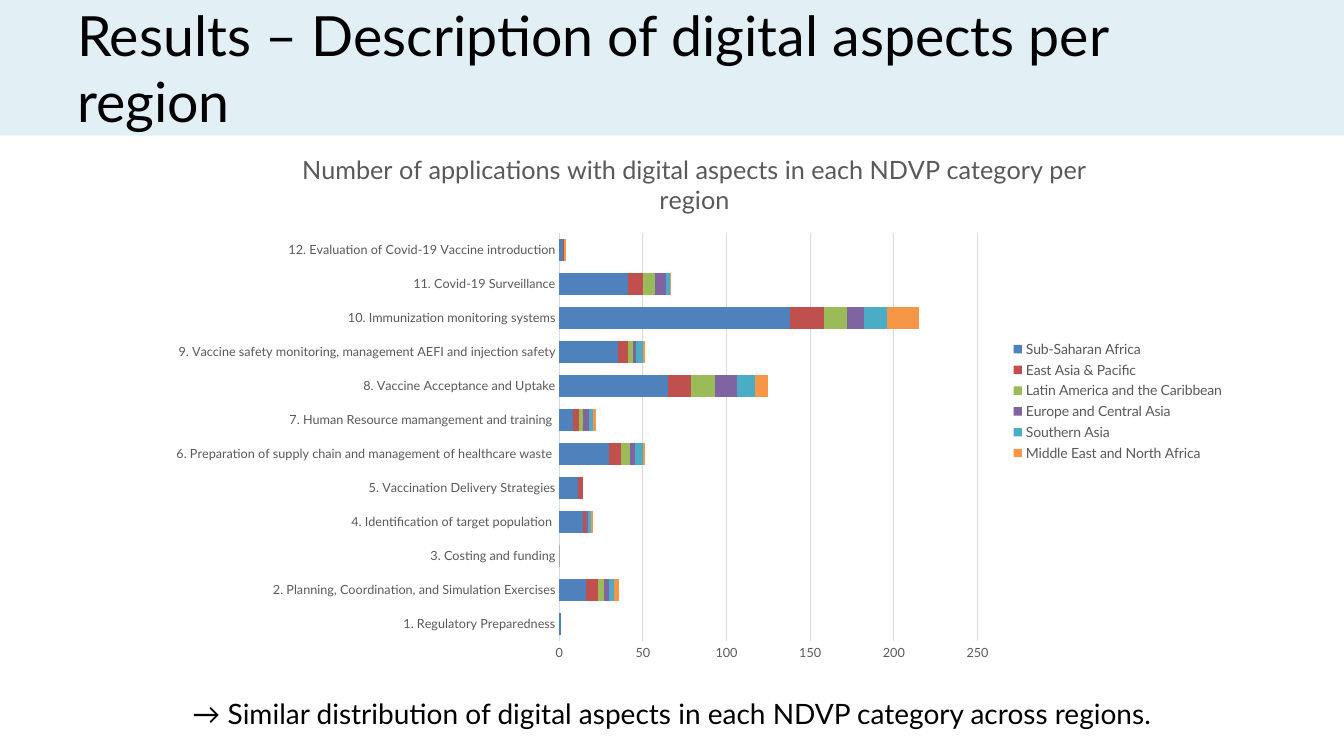
from pptx import Presentation
from pptx import util as u
from pptx.chart import data as chart_data
from pptx.dml import color
from pptx.enum import chart as ch, shapes, text
from pptx.oxml import parse_xml
from pptx.oxml.ns import nsdecls, qn

FACE = "Lato"
GREY = "595959"
RULE = "D9D9D9"
CATEGORIES = [
    "1. Regulatory Preparedness",
    "2. Planning, Coordination, and Simulation Exercises",
    "3. Costing and funding",
    "4. Identification of target population ",
    "5. Vaccination Delivery Strategies",
    "6. Preparation of supply chain and management of healthcare waste ",
    "7. Human Resource mamangement and training ",
    "8. Vaccine Acceptance and Uptake",
    "9. Vaccine safety monitoring, management AEFI and injection safety",
    "10. Immunization monitoring systems",
    "11. Covid-19 Surveillance",
    "12. Evaluation of Covid-19 Vaccine introduction",
]
REGIONS = [
    ("Sub-Saharan Africa", "4F81BD", [1, 16, 0, 14, 11, 30, 8, 65, 35, 138, 41, 2]),
    ("East Asia & Pacific", "C0504D", [0, 7, 0, 2, 3, 7, 4, 14, 6, 20, 9, 1]),
    ("Latin America and the Caribbean", "9BBB59", [0, 4, 0, 0, 0, 5, 2, 14, 3, 14, 7, 0]),
    ("Europe and Central Asia", "8064A2", [0, 3, 0, 1, 0, 3, 4, 13, 2, 10, 7, 0]),
    ("Southern Asia", "4BACC6", [0, 3, 0, 2, 0, 5, 2, 11, 4, 14, 2, 0]),
    ("Middle East and North Africa", "F79646", [0, 3, 0, 1, 0, 1, 2, 8, 1, 19, 1, 1]),
]


def rgb(code):
    """Turn a hex string into a colour."""
    return color.RGBColor.from_string(code)


def set_font(font, size, code):
    """Set face, size and colour of a font."""
    font.name, font.size, font.bold = FACE, u.Pt(size), False
    font.color.rgb = rgb(code)


def write(frame, words, size=20, code="000000", align=text.PP_ALIGN.LEFT,
          anchor=text.MSO_ANCHOR.TOP):
    """Write formatted words into a text frame."""
    frame.word_wrap = True
    frame.vertical_anchor = anchor
    line = frame.paragraphs[0]
    line.alignment = align
    run = line.add_run()
    run.text = words
    set_font(run.font, size, code)


def add_text(slide, box, words, **style):
    """Add a text box holding formatted words."""
    write(slide.shapes.add_textbox(*map(u.Pt, box)).text_frame, words, **style)


def add_header(slide, box, words):
    """Draw the title band with its heading inside."""
    left, top, width, height = box
    band = slide.shapes.add_shape(shapes.MSO_SHAPE.RECTANGLE, *map(u.Pt, box))
    band.shadow.inherit = False
    band.fill.solid()
    band.fill.fore_color.rgb = rgb("E2F0F6")
    band.line.fill.background()
    add_text(slide, (left + 48, top + 3, width - 96, height - 7), words,
             size=39.6, anchor=text.MSO_ANCHOR.MIDDLE)


def place_plot(chart, x, y, w, h):
    """Fix the inner plot area as fractions of the chart."""
    area = chart._chartSpace.chart.plotArea
    for old in area.findall(qn("c:layout")):
        area.remove(old)
    sizes = "".join(f'<c:{tag} val="{value}"/>'
                    for tag, value in zip("xywh", (x, y, w, h)))
    area.insert(0, parse_xml(
        f'<c:layout {nsdecls("c")}><c:manualLayout><c:layoutTarget val="inner"/>'
        f'<c:xMode val="edge"/><c:yMode val="edge"/>{sizes}'
        '</c:manualLayout></c:layout>'))


def add_region_chart(slide, box, title):
    """Add the stacked bars of applications per category and region."""
    counts = chart_data.CategoryChartData()
    counts.categories = CATEGORIES
    for region, _, values in REGIONS:
        counts.add_series(region, values)
    chart = slide.shapes.add_chart(
        ch.XL_CHART_TYPE.BAR_STACKED, *map(u.Pt, box), counts).chart
    set_font(chart.font, 10, "000000")
    chart.has_title = True
    write(chart.chart_title.text_frame, title, size=18, code=GREY,
          align=text.PP_ALIGN.CENTER)
    chart.chart_title.include_in_layout = False

    bars = chart.plots[0]
    bars.gap_width, bars.overlap, bars.vary_by_categories = 55, 100, False
    for series, (_, code, _) in zip(bars.series, REGIONS):
        series.format.fill.solid()
        series.format.fill.fore_color.rgb = rgb(code)

    category, value = chart.category_axis, chart.value_axis
    for axis in (category, value):
        axis.major_tick_mark = axis.minor_tick_mark = ch.XL_TICK_MARK.NONE
        set_font(axis.tick_labels.font, 9, GREY)
    category.has_major_gridlines = False
    value.has_major_gridlines = True
    value.minimum_scale, value.maximum_scale, value.major_unit = 0, 250, 50
    value.format.line.fill.background()
    for line in (category.format.line, value.major_gridlines.format.line):
        line.color.rgb, line.width = rgb(RULE), u.Pt(0.75)

    chart.has_legend = True
    chart.legend.position = ch.XL_LEGEND_POSITION.RIGHT
    chart.legend.include_in_layout = False
    set_font(chart.legend.font, 10, GREY)
    place_plot(chart, 0.375, 0.19, 0.387, 0.753)


def main():
    """Build and save the slide."""
    deck = Presentation()
    deck.slide_width, deck.slide_height = u.Pt(960), u.Pt(540)
    slide = deck.slides.add_slide(deck.slide_layouts[6])
    add_header(slide, (0, 0, 960, 97),
               "Results – Description of digital aspects per region")
    add_text(slide, (27, 494, 906, 40),
             "→ Similar distribution of digital aspects in each NDVP category across regions.",
             align=text.PP_ALIGN.CENTER)
    add_region_chart(slide, (110, 93, 772, 387),
                     "Number of applications with digital aspects in each NDVP category per region")
    deck.save("out.pptx")


if __name__ == "__main__":
    main()
